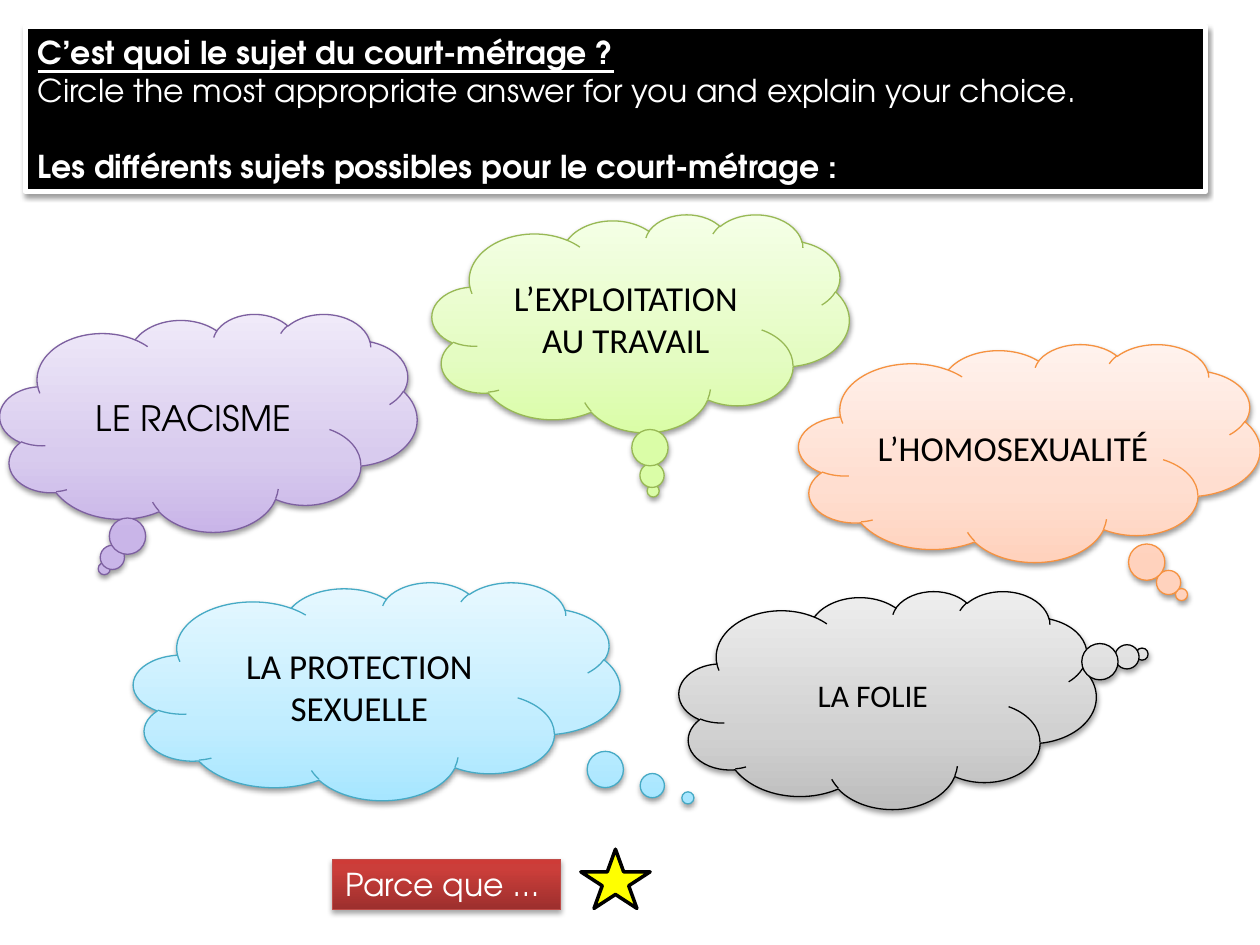
from dataclasses import dataclass, field

from lxml import etree
from pptx import Presentation
from pptx.dml.color import RGBColor
from pptx.enum.shapes import MSO_SHAPE
from pptx.enum.text import MSO_ANCHOR, MSO_AUTO_SIZE, PP_ALIGN
from pptx.oxml.ns import qn
from pptx.util import Inches, Pt

RECT, CLOUD, STAR = MSO_SHAPE.RECTANGLE, MSO_SHAPE.CLOUD_CALLOUT, MSO_SHAPE.STAR_5_POINT
LEFT, CENTER, JUSTIFY = PP_ALIGN.LEFT, PP_ALIGN.CENTER, PP_ALIGN.JUSTIFY
TOP, MIDDLE = MSO_ANCHOR.TOP, MSO_ANCHOR.MIDDLE
GROW = MSO_AUTO_SIZE.SHAPE_TO_FIT_TEXT

COLS, ROWS = 100, 75
SLIDE_W, SLIDE_H = Inches(10), Inches(7.5)
CLOUD_W, CLOUD_H = 33.1, 17.3
BLACK, WHITE, YELLOW = "000000", "FFFFFF", "FFFF00"
GOTHIC, PLAIN = "TeX Gyre Adventor", "Calibri"


@dataclass
class Box:
    col: float
    row: float
    cols: float
    rows: float


@dataclass
class Line:
    text: str
    font: dict = field(default_factory=dict)
    before: float = 0


@dataclass
class Cloud:
    text: str
    box: Box
    tail: tuple[float, float]
    shades: tuple[str, str, str]
    outline: str
    font: str = PLAIN
    size: int = 20


@dataclass
class Shadow:
    alpha: int = 38
    blur: float = 3.1
    dist: float = 1.6


CLOUDS = [
    Cloud("LE RACISME", Box(0, 24.9, CLOUD_W, CLOUD_H), (-0.25, 0.67),
          ("C9B5E8", "D8CBEE", "F0EAF9"), "7D60A0", GOTHIC),
    Cloud("L’EXPLOITATION AU TRAVAIL", Box(34.3, 17, CLOUD_W, CLOUD_H), (0.03, 0.77),
          ("DAFDA7", "E4FCC2", "F5FFE7"), "98B955"),
    Cloud("L’HOMOSEXUALITÉ", Box(63.4, 27.3, 36.6, CLOUD_H), (0.33, 0.65),
          ("FFD2BD", "FFDED0", "FFF2ED"), "F69240"),
    Cloud("LA PROTECTION SEXUELLE", Box(10.6, 46.2, 38.6, CLOUD_H), (0.64, 0.49),
          ("A7E6FF", "C1EDFF", "E7F8FF"), "46AAC5"),
    Cloud("LA FOLIE", Box(53.9, 46.9, CLOUD_W, CLOUD_H), (0.61, -0.21),
          ("BDBDBD", "D1D1D1", "EEEEEE"), BLACK, size=18),
]

BANNER = [
    Line("C’est quoi le sujet du court-métrage\u00a0?".replace("\u00a0", " "),
         {"bold": True, "underline": True}),
    Line("Circle the most appropriate answer for you and explain your choice."),
    Line("Les différents sujets possibles pour le court-métrage :", {"bold": True}, 21.5),
]


def rgb(color: str) -> RGBColor:
    return RGBColor.from_string(color)


def add_gradient(sp, stops: list[tuple[int, str]]) -> None:
    sp.fill.gradient()
    sp.fill.gradient_angle = 90
    gs_list = sp._element.spPr.find(qn("a:gradFill")).find(qn("a:gsLst"))
    for gs in list(gs_list):
        gs_list.remove(gs)
    for pos, color in stops:
        gs = etree.SubElement(gs_list, qn("a:gs"), pos=str(pos * 1000))
        etree.SubElement(gs, qn("a:srgbClr"), val=color)


def add_shadow(sp, shadow: Shadow) -> None:
    effects = sp._element.spPr.find(qn("a:effectLst"))
    outer = etree.SubElement(effects, qn("a:outerShdw"), blurRad=str(Pt(shadow.blur)),
                             dist=str(Pt(shadow.dist)), dir="5400000", rotWithShape="0")
    color = etree.SubElement(outer, qn("a:srgbClr"), val=BLACK)
    etree.SubElement(color, qn("a:alpha"), val=str(shadow.alpha * 1000))


def add_figure(s, kind, box: Box, fill, outline: str, width: float,
               shadow: Shadow | None = None):
    sp = s.shapes.add_shape(
        kind, int(SLIDE_W * box.col / COLS), int(SLIDE_H * box.row / ROWS),
        int(SLIDE_W * box.cols / COLS), int(SLIDE_H * box.rows / ROWS))
    if isinstance(fill, str):
        sp.fill.solid()
        sp.fill.fore_color.rgb = rgb(fill)
    else:
        add_gradient(sp, fill)
    sp.line.color.rgb = rgb(outline)
    sp.line.width = Pt(width)
    sp.shadow.inherit = False
    if shadow:
        add_shadow(sp, shadow)
    return sp


def write(sp, lines: list[Line], font: dict, color: str, align, frame: dict) -> None:
    tf = sp.text_frame
    for name, value in frame.items():
        setattr(tf, name, value)
    for i, line in enumerate(lines):
        p = tf.paragraphs[0] if i == 0 else tf.add_paragraph()
        p.alignment = align
        if line.before:
            p.space_before = Pt(line.before)
        r = p.add_run()
        r.text = line.text
        for name, value in {**font, **line.font}.items():
            setattr(r.font, name, value)
        r.font.color.rgb = rgb(color)


def add_cloud(s, cloud: Cloud) -> None:
    stops = list(zip((0, 35, 100), cloud.shades))
    sp = add_figure(s, CLOUD, cloud.box, stops, cloud.outline, 0.75, Shadow())
    for i, offset in enumerate(cloud.tail):
        sp.adjustments[i] = offset
    write(sp, [Line(cloud.text)], {"name": cloud.font, "size": Pt(cloud.size)}, BLACK,
          CENTER, {"vertical_anchor": MIDDLE, "word_wrap": True})


def main() -> None:
    prs = Presentation()
    prs.slide_width, prs.slide_height = SLIDE_W, SLIDE_H
    s = prs.slides.add_slide(prs.slide_layouts[6])
    heading = {"name": GOTHIC, "size": Pt(18)}

    sp = add_figure(s, RECT, Box(2, 2.1, 93.7, 13.1), BLACK, WHITE, 3, Shadow())
    write(sp, BANNER, heading, WHITE, JUSTIFY,
          {"vertical_anchor": MIDDLE, "word_wrap": True, "auto_size": GROW})

    for cloud in CLOUDS:
        add_cloud(s, cloud)

    reds = [(0, "9C2F2D"), (80, "CB3E3A"), (100, "CE3B37")]
    sp = add_figure(s, RECT, Box(26.4, 68.2, 18.1, 4), reds, "BF4C48", 0.75,
                    Shadow(alpha=35, dist=1.8))
    write(sp, [Line("Parce que …")], heading, WHITE, LEFT,
          {"vertical_anchor": TOP, "word_wrap": False, "auto_size": GROW})

    add_figure(s, STAR, Box(46.1, 67.4, 5.5, 4.7), YELLOW, BLACK, 2)
    prs.save("out.pptx")


if __name__ == "__main__":
    main()
